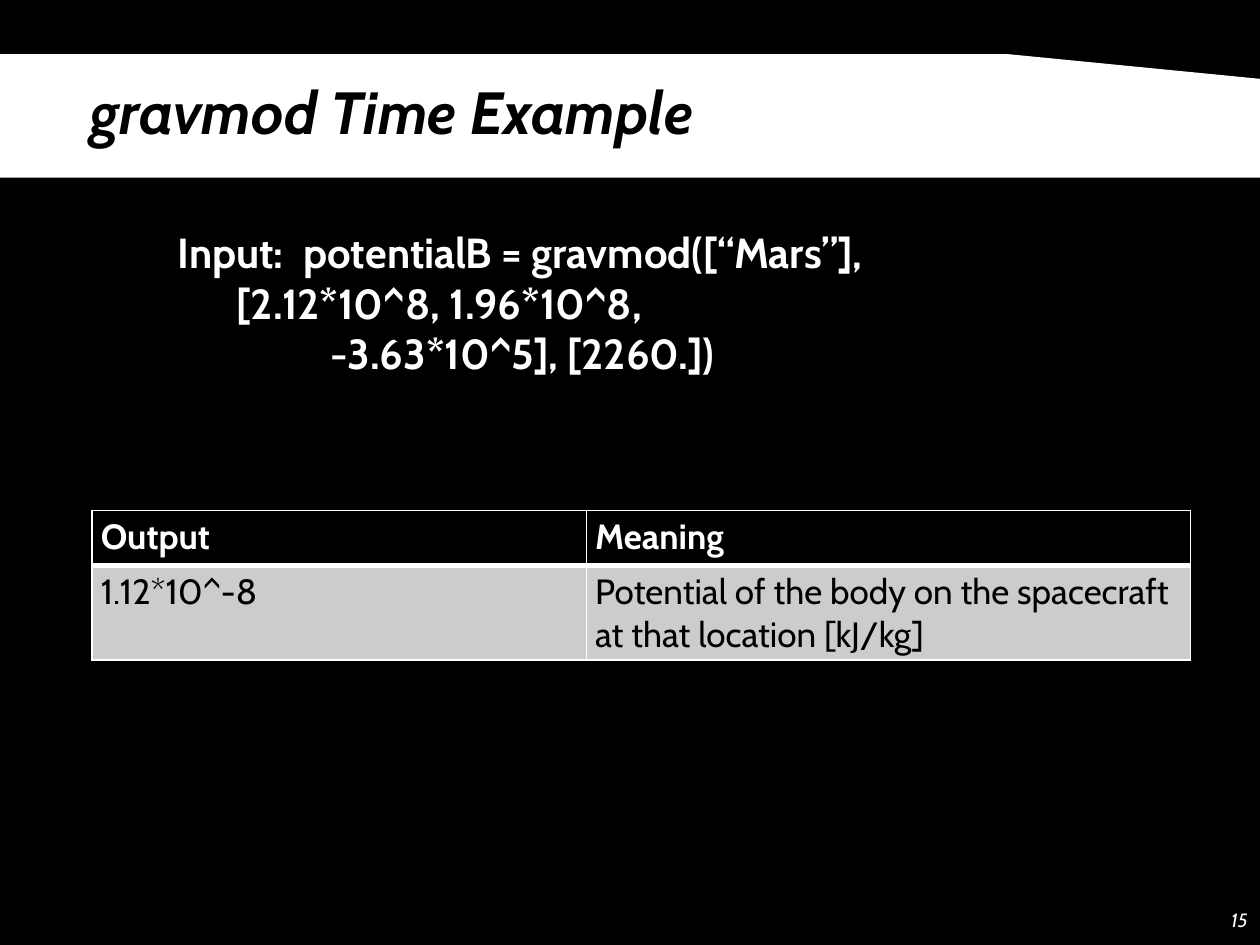
from dataclasses import dataclass

from lxml.etree import SubElement
from pptx import Presentation
from pptx.dml.color import RGBColor
from pptx.enum.shapes import MSO_SHAPE as Shape
from pptx.enum.text import MSO_ANCHOR as Anchor, PP_ALIGN as Align
from pptx.oxml.ns import qn
from pptx.util import Inches, Pt

WIDTH, HEIGHT = Inches(10), Inches(7.5)


@dataclass(frozen=True)
class Theme:
    font: str = "Cabin"
    dark: str = "000000"
    light: str = "FFFFFF"
    row: str = "CCCCCC"
    title: int = 34
    code: int = 24
    table: int = 20
    number: int = 11
    thin: int = 1
    thick: int = 3


THEME = Theme()


def area(left, top, width, height):
    """Turn percentages of the slide into lengths."""
    return [int(share * full / 100) for share, full in
            zip((left, top, width, height), (WIDTH, HEIGHT) * 2)]


def paint(fill, color):
    fill.solid()
    fill.fore_color.rgb = RGBColor.from_string(color)


def add_span(para, text, color, **formats):
    span = para.add_run()
    span.text = text
    span.font.color.rgb = RGBColor.from_string(color)
    for name, value in {"name": THEME.font, **formats}.items():
        setattr(span.font, name, value)


def add_box(page, place, **formats):
    body = page.shapes.add_textbox(*place).text_frame
    for name, value in {"word_wrap": True, **formats}.items():
        setattr(body, name, value)
    return body


def add_banner(page, place):
    banner = page.shapes.add_shape(Shape.FLOWCHART_CARD, *place)
    banner.shadow.inherit = False
    paint(banner.fill, THEME.light)
    banner.line.fill.background()
    # Mirror the card so that its cut corner is at the right
    banner._element.spPr.find(qn("a:xfrm")).set("flipH", "1")


def add_code(page, place):
    body = add_box(page, place, margin_left=0)
    style = {"size": Pt(THEME.code), "bold": True, "color": THEME.light}

    call = body.paragraphs[0]
    add_span(call, "Input:\tpotentialB = gravmod([“Mars”],", **style)
    stops = SubElement(call._p.get_or_add_pPr(), qn("a:tabLst"))
    SubElement(stops, qn("a:tab"), pos=str(Inches(1)), algn="l")

    arguments = body.add_paragraph()
    add_span(arguments, "[2.12*10^8, 1.96*10^8,", **style)
    arguments.add_line_break()
    add_span(arguments, "-3.63*10^5], [2260.])", **style)
    # Hanging indent: the second line starts further in
    for name, length in {"marL": 1.21, "indent": -0.74}.items():
        arguments._p.get_or_add_pPr().set(name, str(Inches(length)))


def add_borders(cell, **widths):
    properties = cell._tc.get_or_add_tcPr()
    for position, side in enumerate("LRTB"):
        line = properties.makeelement(
            qn(f"a:ln{side}"), {"w": str(Pt(widths.get(side, THEME.thin)))})
        fill = SubElement(line, qn("a:solidFill"))
        SubElement(fill, qn("a:srgbClr"), val=THEME.light)
        properties.insert(position, line)


def add_results(page, place, rows, column_shares, row_shares):
    table = page.shapes.add_table(len(rows), len(rows[0]), *place).table
    for column, share in zip(table.columns, column_shares):
        column.width = int(place[2] * share)
    for row, share in zip(table.rows, row_shares):
        row.height = int(place[3] * share)

    margins = {"margin_left": Inches(0.07), "margin_right": Inches(0.07),
               "margin_top": Inches(0.04), "margin_bottom": Inches(0.04)}
    for r, texts in enumerate(rows):
        header = r == 0
        for c, text in enumerate(texts):
            cell = table.cell(r, c)
            for name, value in margins.items():
                setattr(cell, name, value)
            paint(cell.fill, THEME.dark if header else THEME.row)
            add_span(cell.text_frame.paragraphs[0], text,
                     THEME.light if header else THEME.dark,
                     size=Pt(THEME.table), bold=header)
            edge = THEME.thick if r < 2 else THEME.thin
            add_borders(cell, **{"B" if header else "T": edge})


def main():
    deck = Presentation()
    deck.slide_width, deck.slide_height = WIDTH, HEIGHT
    page = deck.slides.add_slide(deck.slide_layouts[6])
    paint(page.background.fill, THEME.dark)

    # Title on its banner
    add_banner(page, area(0, 5.73, 100, 13.07))
    title = add_box(page, area(6.2, 8.13, 89.3, 13.07)).paragraphs[0]
    title.line_spacing = 0.9
    add_span(title, "gravmod Time Example", THEME.dark,
             size=Pt(THEME.title), bold=True, italic=True)

    # Function call
    add_code(page, area(14.1, 23.33, 76, 17.47))

    # Output table
    add_results(page, area(7.3, 54, 87.2, 15.87),
                [("Output", "Meaning"),
                 ("1.12*10^-8", "Potential of the body on the spacecraft "
                                "at that location [kJ/kg]")],
                column_shares=(0.45, 0.55), row_shares=(0.37, 0.63))

    # Page number
    number = add_box(page, area(95.5, 94.67, 4.5, 5.33),
                     vertical_anchor=Anchor.MIDDLE).paragraphs[0]
    number.alignment = Align.RIGHT
    add_span(number, "15", THEME.light, size=Pt(THEME.number), italic=True)

    deck.save("out.pptx")


if __name__ == "__main__":
    main()
